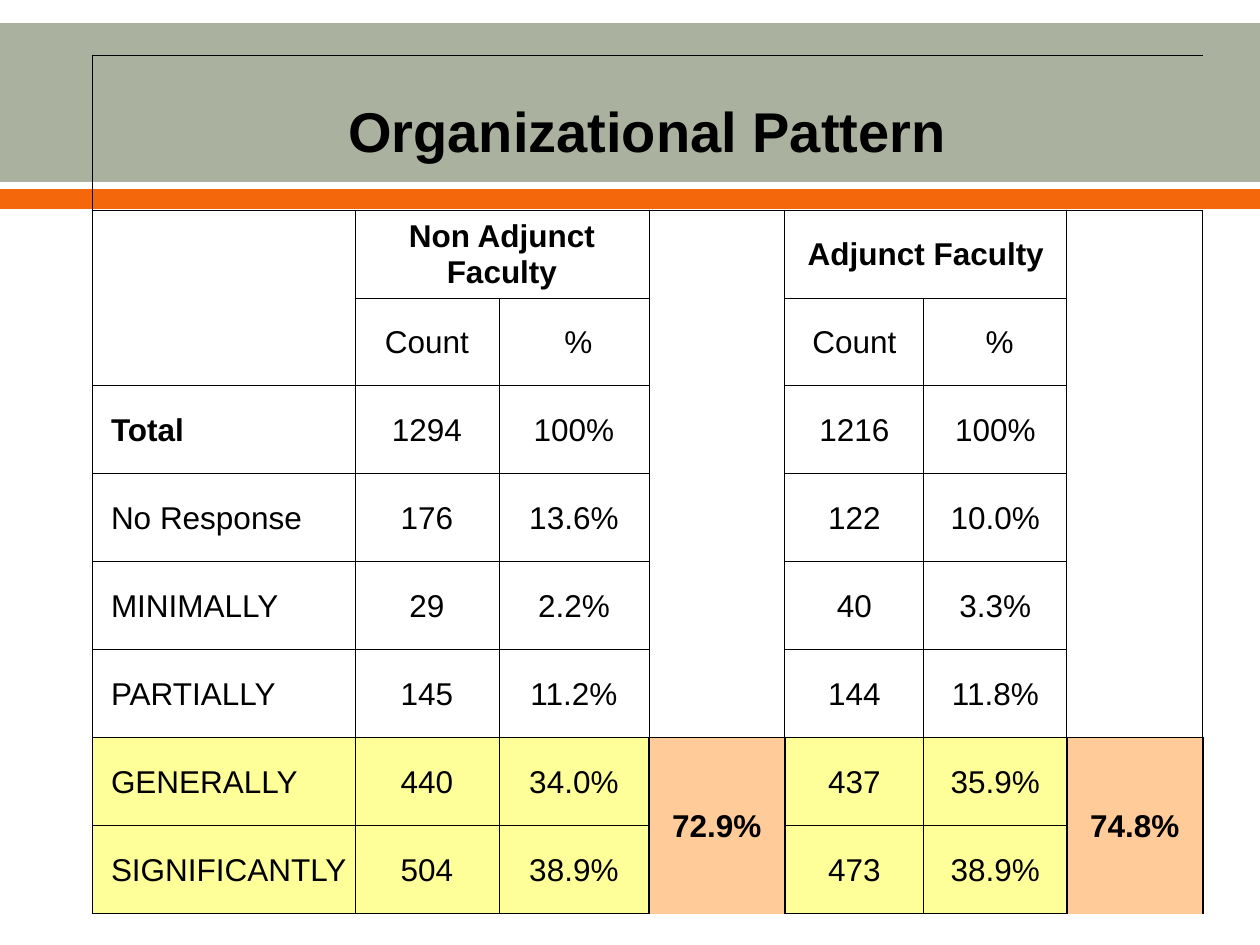
from dataclasses import dataclass

from lxml import etree
from pptx import Presentation
from pptx import util as u
from pptx.dml.color import RGBColor
from pptx.enum import shapes, text
from pptx.oxml import ns

SCALE = 914400 / 126


@dataclass(frozen=True)
class Theme:
    """Hold the colours, font and type sizes of the slide."""
    sage: str = "ABB19F"
    orange: str = "F4680B"
    yellow: str = "FFFF99"
    peach: str = "FFCC99"
    ink: str = "000000"
    font: str = "Arial"
    head: int = 32
    body: int = 18
    thin: float = 0.5
    thick: float = 1


THEME = Theme()
COLS = [263, 144, 150, 136, 139, 143, 136]
ROWS = [155] + [88] * 8
SIDES = {"L": (0, -1), "R": (0, 1), "T": (-1, 0), "B": (1, 0)}
MERGED = [(0, 0, 0, 6), (1, 1, 1, 2), (1, 4, 1, 5), (7, 3, 8, 3), (7, 6, 8, 6)]
GAPS = [(1, 0, 2, 0), (1, 3, 6, 3), (1, 6, 6, 6)]
TOTALS = MERGED[3:]
DATA = [
    ["Organizational Pattern"] + [""] * 6,
    ["", "Non Adjunct Faculty", "", "", "Adjunct Faculty", "", ""],
    ["", "Count", " %", "", "Count", " %", ""],
    ["Total", "1294", "100%", "", "1216", "100%", ""],
    ["No Response", "176", "13.6%", "", "122", "10.0%", ""],
    ["MINIMALLY", "29", "2.2%", "", "40", "3.3%", ""],
    ["PARTIALLY", "145", "11.2%", "", "144", "11.8%", ""],
    ["GENERALLY", "440", "34.0%", "72.9%", "437", "35.9%", "74.8%"],
    ["SIGNIFICANTLY", "504", "38.9%", "", "473", "38.9%", ""],
]


def px(n):
    """Turn pixels into EMU."""
    return u.Emu(round(n * SCALE))


def apply(item, **vals):
    """Set each given value on an item."""
    for name, val in vals.items():
        setattr(item, name, val)


def paint(fill, tint):
    """Fill with a colour, or with nothing."""
    if tint:
        fill.solid()
        fill.fore_color.rgb = RGBColor.from_string(tint)
    else:
        fill.background()


def zone(row, col):
    """Return the block that holds a cell, or the cell alone."""
    for box in MERGED + GAPS:
        if box[0] <= row <= box[2] and box[1] <= col <= box[3]:
            return box
    return row, col, row, col


def rule(cell, side, width):
    """Draw one border of a cell, or hide it at zero width."""
    line = etree.SubElement(cell._tc.get_or_add_tcPr(), ns.qn("a:ln" + side))
    if not width:
        etree.SubElement(line, ns.qn("a:noFill"))
        return
    line.set("w", str(u.Pt(width)))
    fill = etree.SubElement(line, ns.qn("a:solidFill"))
    etree.SubElement(fill, ns.qn("a:srgbClr"), val=THEME.ink)


def frame(cell, row, col):
    """Border a cell wherever its block ends."""
    own = zone(row, col)
    for side, (down, across) in SIDES.items():
        near = zone(row + down, col + across)
        bold = own in TOTALS or near in TOTALS
        rule(cell, side, 0 if near == own else THEME.thick if bold else THEME.thin)


def write(cell, row, col, words):
    """Put formatted words in a cell."""
    label = col == 0 and row > 0
    apply(cell, vertical_anchor=text.MSO_ANCHOR.MIDDLE,
          margin_left=px(19 if label else 1), margin_right=px(1),
          margin_top=px(1), margin_bottom=0)
    para = cell.text_frame.paragraphs[0]
    para.alignment = text.PP_ALIGN.LEFT if label else text.PP_ALIGN.CENTER
    para.font.size = u.Pt(THEME.body)
    if words:
        run = para.add_run()
        run.text = words
        bold = row < 2 or words == "Total" or zone(row, col) in TOTALS
        apply(run.font, name=THEME.font, bold=bold,
              size=u.Pt(THEME.body if row else THEME.head))
        run.font.color.rgb = RGBColor.from_string(THEME.ink)


def shade(row, col):
    """Pick the fill of a cell."""
    if zone(row, col) in TOTALS:
        return THEME.peach
    return THEME.yellow if row > 6 else None


def bands(slide, left, top, width):
    """Lay the two header bands across the box."""
    for drop, high, tint in [(0, 159, THEME.sage), (166, 20, THEME.orange)]:
        bar = slide.shapes.add_shape(shapes.MSO_SHAPE.RECTANGLE, px(left),
                                     px(top + drop), px(width), px(high))
        bar.shadow.inherit = False
        paint(bar.fill, tint)
        bar.line.fill.background()


def survey(slide, left, top):
    """Build the survey table from its top left corner."""
    grid = slide.shapes.add_table(len(ROWS), len(COLS), px(left), px(top),
                                  px(sum(COLS)), px(sum(ROWS))).table
    apply(grid, first_row=False, horz_banding=False)
    for col, wide in zip(grid.columns, COLS):
        col.width = px(wide)
    for row, high in zip(grid.rows, ROWS):
        row.height = px(high)
    for r, line in enumerate(DATA):
        for c, words in enumerate(line):
            cell = grid.cell(r, c)
            write(cell, r, c, words)
            frame(cell, r, c)
            paint(cell.fill, shade(r, c))
    for r, c, end, last in MERGED:
        grid.cell(r, c).merge(grid.cell(end, last))


def main():
    """Build and save the slide."""
    deck = Presentation()
    apply(deck, slide_width=px(1260), slide_height=px(945))
    slide = deck.slides.add_slide(deck.slide_layouts[6])
    bands(slide, 0, 23, 1260)
    survey(slide, 92, 55)
    deck.save("out.pptx")


if __name__ == "__main__":
    main()
